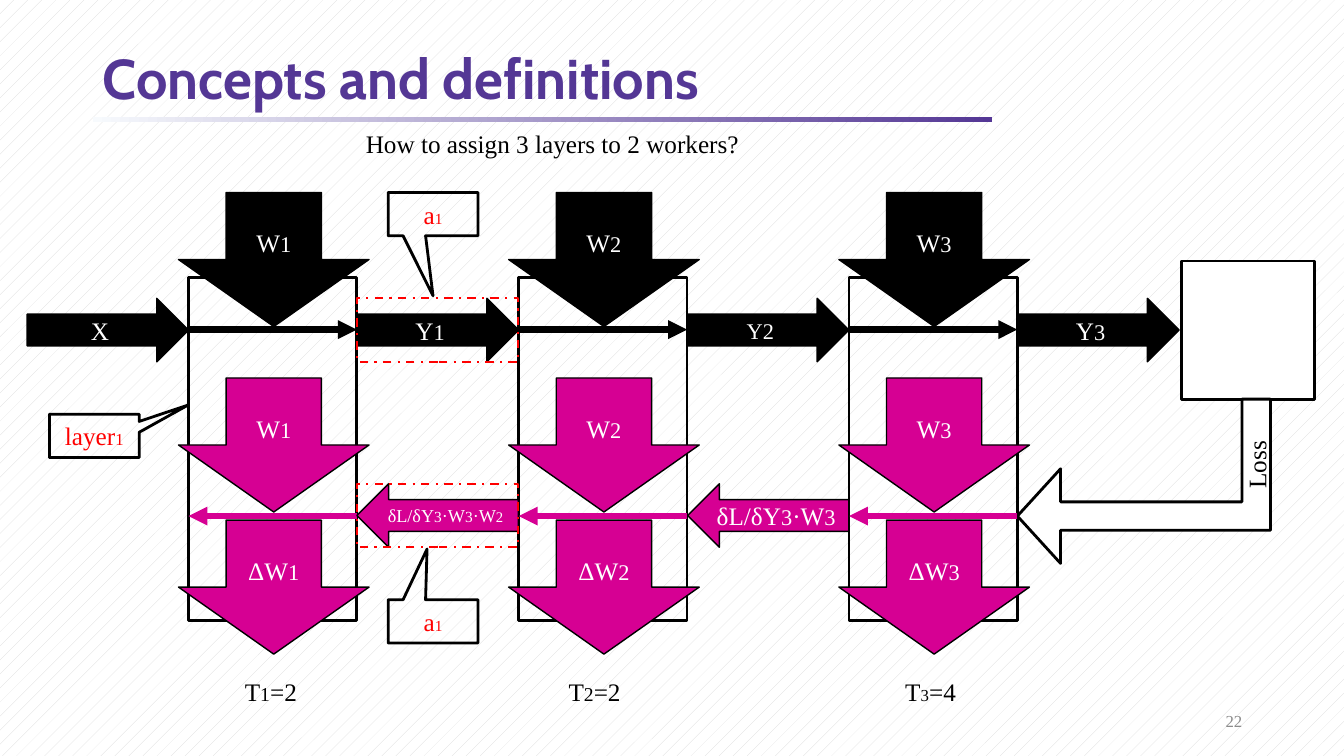
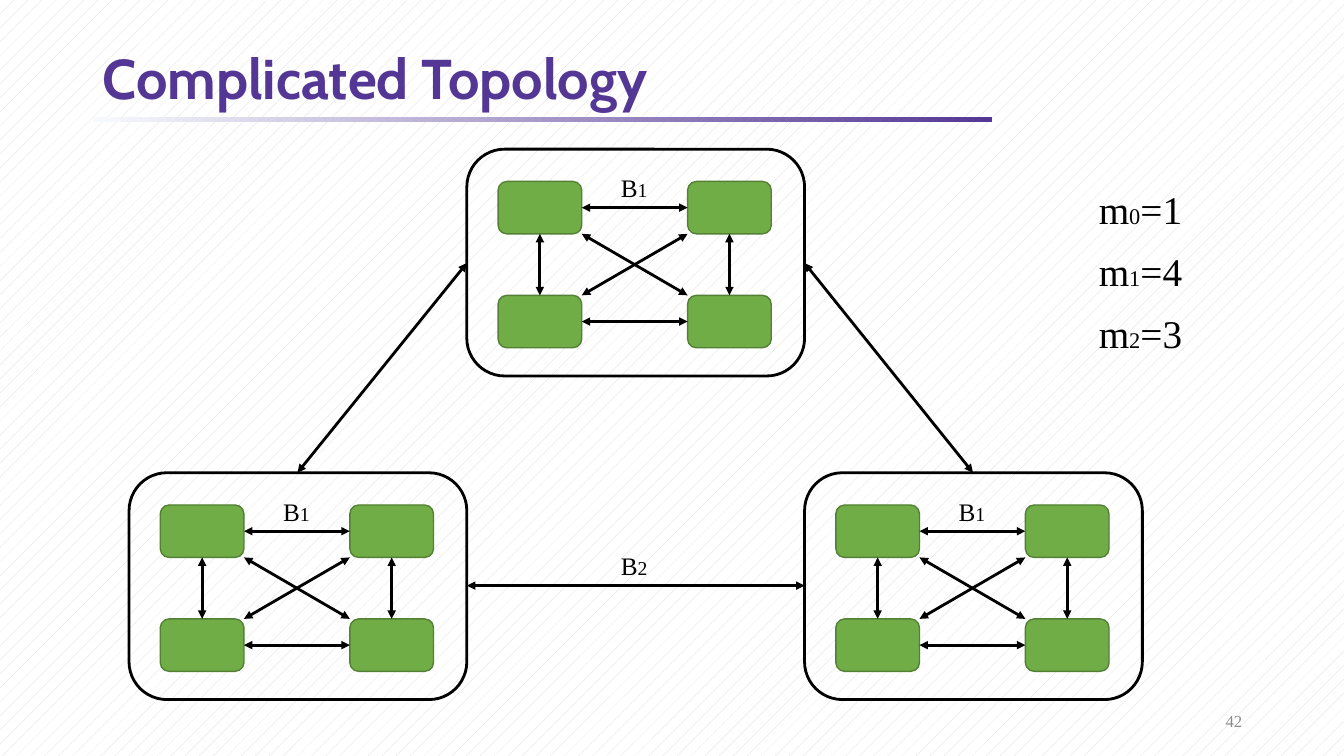
from lxml import etree
from pptx import Presentation
from pptx.dml.color import RGBColor
from pptx.enum.dml import MSO_LINE, MSO_PATTERN
from pptx.enum.shapes import MSO_CONNECTOR, MSO_SHAPE
from pptx.enum.text import MSO_ANCHOR, PP_ALIGN
from pptx.oxml.ns import qn
from pptx.util import Inches, Pt

RECT, ROUNDED = MSO_SHAPE.RECTANGLE, MSO_SHAPE.ROUNDED_RECTANGLE
RIGHT, LEFT, DOWN = MSO_SHAPE.RIGHT_ARROW, MSO_SHAPE.LEFT_ARROW, MSO_SHAPE.DOWN_ARROW
BENT, CALLOUT = MSO_SHAPE.BENT_UP_ARROW, MSO_SHAPE.RECTANGULAR_CALLOUT
STRAIGHT = MSO_CONNECTOR.STRAIGHT
MIDDLE = MSO_ANCHOR.MIDDLE
ALIGN_LEFT, ALIGN_CENTER, ALIGN_RIGHT = PP_ALIGN.LEFT, PP_ALIGN.CENTER, PP_ALIGN.RIGHT

BLACK = RGBColor(0x00, 0x00, 0x00)
WHITE = RGBColor(0xFF, 0xFF, 0xFF)
RED = RGBColor(0xFF, 0x00, 0x00)
PINK = RGBColor(0xD6, 0x00, 0x93)
GREEN = RGBColor(0x70, 0xAD, 0x47)
DARK_GREEN = RGBColor(0x53, 0x80, 0x35)
PURPLE = RGBColor(0x54, 0x37, 0x95)
PALE = RGBColor(0xF7, 0xFA, 0xFD)
GRAY = RGBColor(0x8C, 0x8C, 0x8C)
PATTERN_GRAY = RGBColor(0xD9, 0xD9, 0xD9)

TITLE_FONT, BODY_FONT = "Cabin", "Times New Roman"


def add_box(shapes, kind, place, pieces=(), color=BLACK, fill=None, line=BLACK,
            weight=2, align=ALIGN_CENTER):
    """Add a preset shape, or a text box when kind is None; pieces are (text, size)."""
    place = [Inches(value) for value in place]
    if kind is None:
        box = shapes.add_textbox(*place)
    else:
        box = shapes.add_shape(kind, *place)
        box.shadow.inherit = False
        box.line.color.rgb = line
        box.line.width = Pt(weight)
        if fill is None:
            box.fill.background()
        else:
            box.fill.solid()
            box.fill.fore_color.rgb = fill
        box.text_frame.vertical_anchor = MIDDLE
    box.text_frame.word_wrap = False
    para = box.text_frame.paragraphs[0]
    para.alignment = align
    for text, size in pieces:
        span = para.add_run()
        span.text = text
        span.font.name = BODY_FONT
        span.font.size = Pt(size)
        span.font.color.rgb = color
    return box


def add_arrow(shapes, start, end, color=BLACK, weight=2, ends=("headEnd", "tailEnd")):
    points = [Inches(value) for value in (*start, *end)]
    arrow = shapes.add_connector(STRAIGHT, *points)
    arrow.line.color.rgb = color
    arrow.line.width = Pt(weight)
    outline = arrow.line._get_or_add_ln()
    for name in ends:
        etree.SubElement(outline, qn("a:" + name), type="triangle")
    etree.SubElement(arrow._element.spPr, qn("a:effectLst"))


deck = Presentation()
deck.slide_width, deck.slide_height = Inches(13.33), Inches(7.5)

# Shared layout: patterned background and title position
layout = deck.slide_layouts[5]
backdrop = layout.background.fill
backdrop.patterned()
backdrop.pattern = MSO_PATTERN.PERCENT_5
backdrop.fore_color.rgb = PATTERN_GRAY
backdrop.back_color.rgb = WHITE
title = layout.placeholders[0]
title.left, title.top = Inches(0.92), Inches(0.43)
title.width, title.height = Inches(11.5), Inches(0.75)

# Title, rule and page number on each slide
pages = []
for heading, number in (("Concepts and definitions", "22"), ("Complicated Topology", "42")):
    page = deck.slides.add_slide(layout)
    pages.append(page)
    frame = page.shapes.title.text_frame
    frame.text = heading
    frame.vertical_anchor = MIDDLE
    para = frame.paragraphs[0]
    para.alignment = ALIGN_LEFT
    para.line_spacing = 0.9
    font = para.runs[0].font
    font.name, font.size, font.bold = TITLE_FONT, Pt(40), True
    font.color.rgb = PURPLE

    rule = add_box(page.shapes, RECT, (0.92, 1.16, 8.92, 0.05))
    rule.line.fill.background()
    rule.fill.gradient()
    rule.fill.gradient_angle = 0
    for stop, shade in zip(rule.fill.gradient_stops, (PALE, PURPLE)):
        stop.color.rgb = shade

    footer = add_box(page.shapes, None, (9.42, 6.95, 3, 0.4), [(number, 12)], GRAY,
                     align=ALIGN_RIGHT)
    footer.text_frame.word_wrap = True
    footer.text_frame.vertical_anchor = MIDDLE

# Slide 1: forward and backward pass through three layers
shapes = pages[0].shapes
add_box(shapes, None, (3.53, 1.22, 3.94, 0.4),
        [("How to assign 3 layers to 2 workers?", 18)], align=ALIGN_LEFT)

LAYER_LEFT, LAYER_WIDTH, LAYER_PITCH = 1.87, 1.67, 3.275
FORWARD_Y, BACKWARD_Y = 3.27, 5.12
FLOW_WIDTH, FLOW_HEIGHT = 1.6, 0.63
FORWARD_TOP, BACKWARD_TOP = 2.96, 4.8

# Loss box and its arrow back to the last layer
add_box(shapes, RECT, (11.72, 2.59, 1.32, 1.37), fill=WHITE)
loss = add_box(shapes, BENT, (10.53, 3.52, 1.63, 2.51), [("Loss", 18)], fill=WHITE)
for index, value in enumerate((0.173, 0.288, 0.263)):
    loss.adjustments[index] = value
loss.rotation = 270
loss._element.spPr.xfrm.set("flipH", "1")

# Layers with their weights, gradients and times
times = (("=2", 14, 2.33), ("=2", 14, 5.54), ("=4", 12, 8.88))
for index, (time, small, time_left) in enumerate(times):
    number = str(index + 1)
    left = LAYER_LEFT + index * LAYER_PITCH
    right = left + LAYER_WIDTH
    add_box(shapes, RECT, (left, 2.75, LAYER_WIDTH, 3.41))
    for top, name, fill in ((1.91, "W", BLACK), (3.75, "W", PINK), (5.16, "ΔW", PINK)):
        add_box(shapes, DOWN, (left - 0.1, top, 1.89, 1.33),
                [(name, 18), (number, 16)], WHITE, fill, weight=1)
    add_arrow(shapes, (left, FORWARD_Y), (right, FORWARD_Y), BLACK, 4.5, ["tailEnd"])
    add_arrow(shapes, (right, BACKWARD_Y), (left, BACKWARD_Y), PINK, 4.5, ["tailEnd"])
    add_box(shapes, None, (time_left, 6.66, 0.72, 0.4),
            [("T", 18), (number, small), (time, 18)], align=ALIGN_LEFT)

# Activations between the layers
forward = ([("X", 18)], [("Y", 18), ("1", 16)], [("Y2", 16)], [("Y", 18), ("3", 16)])
for index, pieces in enumerate(forward):
    left = 0.27 + index * LAYER_PITCH
    add_box(shapes, RIGHT, (left, FORWARD_TOP, FLOW_WIDTH, FLOW_HEIGHT), pieces, WHITE,
            BLACK, weight=1)

# Gradients between the layers
backward = (
    (3.54, [("δL/δY", 13), ("3", 11), ("·W", 13), ("3", 11), ("·W", 13), ("2", 10.5)]),
    (6.82, [("δL/δY", 18), ("3", 16), ("·W", 18), ("3", 16)]),
)
for left, pieces in backward:
    add_box(shapes, LEFT, (left, BACKWARD_TOP, FLOW_WIDTH, FLOW_HEIGHT), pieces, WHITE,
            PINK, weight=1)

# Dashed frames and callouts
for top in (FORWARD_TOP, BACKWARD_TOP):
    dashed = add_box(shapes, RECT, (3.54, top, FLOW_WIDTH, FLOW_HEIGHT), line=RED,
                     weight=1.5)
    dashed.line.dash_style = MSO_LINE.DASH_DOT
callouts = (
    (0.49, 4.11, "layer", 12, (1.044, -0.711)),
    (3.85, 1.91, "a", 11, (0, 1.884)),
    (3.85, 5.95, "a", 11, (-0.067, -1.67)),
)
for left, top, name, small, tip in callouts:
    callout = add_box(shapes, CALLOUT, (left, top, 0.89, 0.43),
                      [(name, 18), ("1", small)], RED)
    callout.adjustments[0], callout.adjustments[1] = tip

# Slide 2: three clusters of four nodes
shapes = pages[1].shapes
NODE_WIDTH, NODE_HEIGHT = 0.83, 0.52
CLUSTER_WIDTH, CLUSTER_HEIGHT = 3.35, 2.25
for left, top in ((4.63, 1.48), (7.98, 4.69), (1.28, 4.69)):
    cluster = shapes.add_group_shape().shapes
    columns = (left + 0.31, left + 2.19)
    rows = (top + 0.32, top + 1.45)
    for x in columns:
        for y in rows:
            add_box(cluster, ROUNDED, (x, y, NODE_WIDTH, NODE_HEIGHT), fill=GREEN,
                    line=DARK_GREEN, weight=1)
    # Links between the facing sides and corners of the nodes
    inner_left, inner_right = columns[0] + NODE_WIDTH, columns[1]
    inner_top, inner_bottom = rows[0] + NODE_HEIGHT, rows[1]
    for y in rows:
        middle = y + NODE_HEIGHT / 2
        add_arrow(cluster, (inner_left, middle), (inner_right, middle))
    for x in columns:
        middle = x + NODE_WIDTH / 2
        add_arrow(cluster, (middle, inner_top), (middle, inner_bottom))
    add_arrow(cluster, (inner_left, inner_top), (inner_right, inner_bottom))
    add_arrow(cluster, (inner_right, inner_top), (inner_left, inner_bottom))
    add_box(cluster, None, (left + 1.43, top + 0.18, 0.47, 0.4), [("B", 18), ("1", 14)],
            align=ALIGN_LEFT)
    add_box(cluster, ROUNDED, (left, top, CLUSTER_WIDTH, CLUSTER_HEIGHT))

# Links between the clusters
for start, end in (((4.63, 2.61), (2.95, 4.69)), ((7.98, 2.61), (9.65, 4.69)),
                   ((4.63, 5.81), (7.98, 5.81))):
    add_arrow(shapes, start, end)
add_box(shapes, None, (6.06, 5.41, 0.47, 0.4), [("B", 18), ("2", 14)], align=ALIGN_LEFT)

# Size of each level
for level, size in enumerate((1, 4, 3)):
    add_box(shapes, None, (10.8, 1.79 + level * 0.615, 1.04, 0.57),
            [("m", 28), (str(level), 16), (f"={size}", 28)], align=ALIGN_LEFT)

deck.save("out.pptx")
